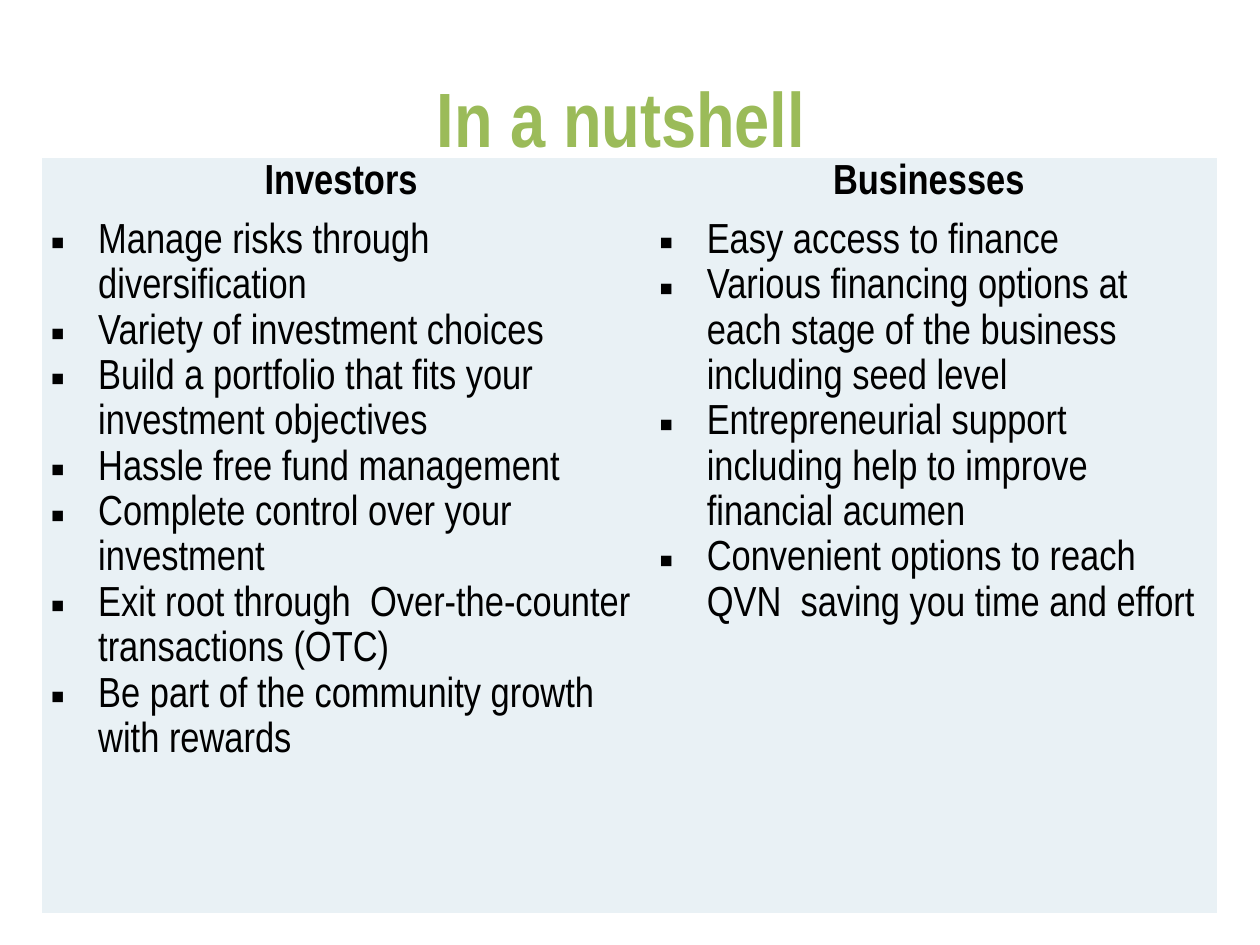
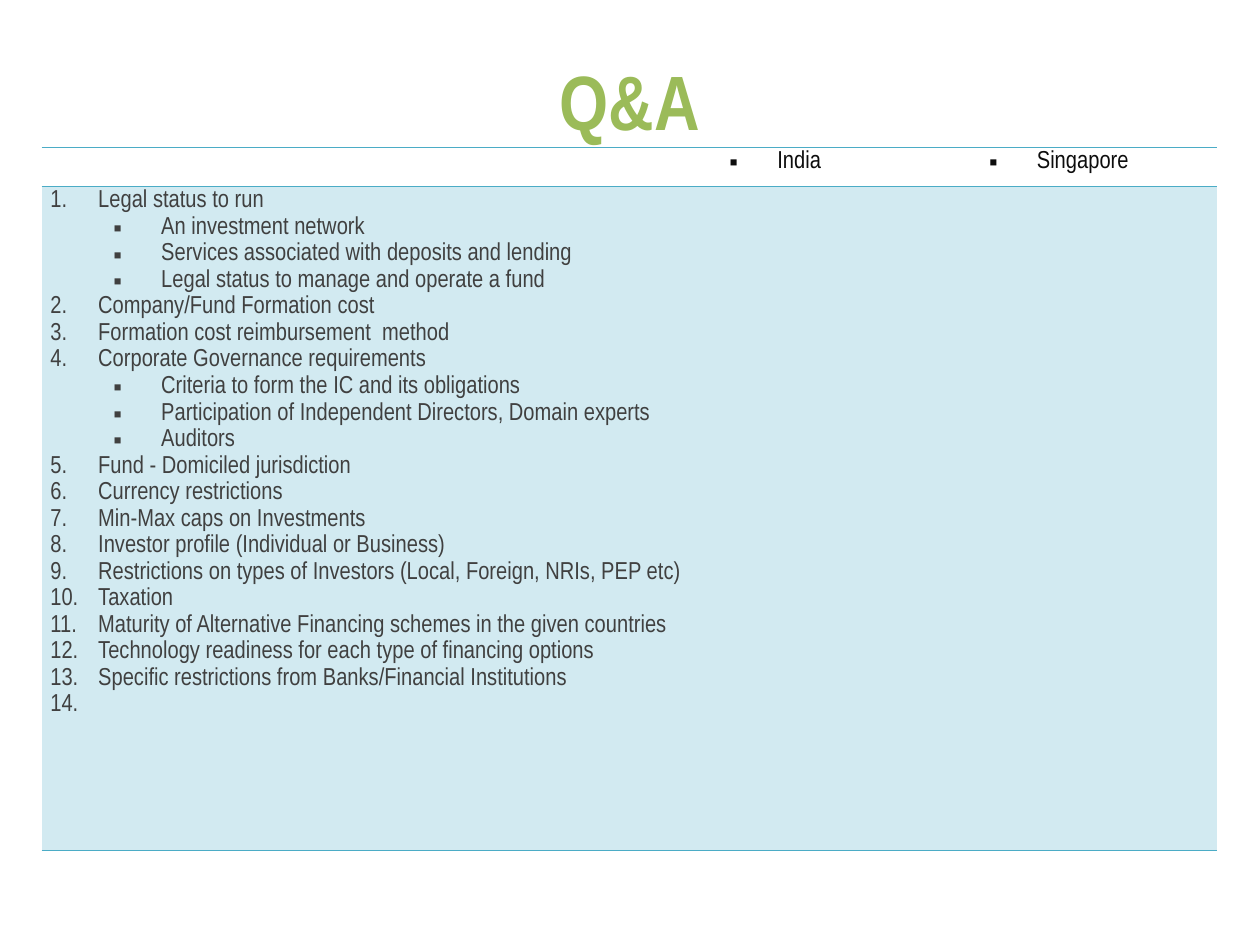
import pptx
import pptx.util
import pptx.dml.color
import pptx.enum.text
import pptx.oxml.ns
import lxml.etree

Inches = pptx.util.Inches
Pt = pptx.util.Pt
RGBColor = pptx.dml.color.RGBColor
CENTER = pptx.enum.text.PP_ALIGN.CENTER
MIDDLE = pptx.enum.text.MSO_ANCHOR.MIDDLE
qn = pptx.oxml.ns.qn

# Shared look
FONT = "Arial Narrow"
GREEN = RGBColor(0x9B, 0xBB, 0x59)
BLACK = RGBColor(0, 0, 0)
NEAR_BLACK = RGBColor(0x0D, 0x0D, 0x0D)
GREY = RGBColor(0x40, 0x40, 0x40)
PALE_BLUE = RGBColor(0xE9, 0xF1, 0xF5)
LIGHT_TEAL = RGBColor(0xD2, 0xEA, 0xF1)
TEAL = RGBColor(0x4B, 0xAC, 0xC6)
PLAIN_TABLE = "{2D5ABB26-0587-4C30-8999-92F81FD0307C}"
SQUARE, NUMBER = "square", "number"
HANGING = 0.38
SUB_INDENT = 0.5

TITLE_FORMAT = {"name": FONT, "size": Pt(44), "bold": True}
HEADING_FORMAT = {"name": FONT, "size": Pt(24), "bold": True}
BENEFIT_FORMAT = {"name": FONT, "size": Pt(24), "bold": False}
QUESTION_FORMAT = {"name": FONT, "size": Pt(14), "bold": False}

BENEFITS = {
    "Investors ": [
        "Manage risks through diversification",
        "Variety of investment choices",
        "Build a portfolio that fits your investment objectives",
        "Hassle free fund management",
        "Complete control over your investment",
        "Exit root through  Over-the-counter transactions (OTC)",
        "Be part of the community growth with rewards",
    ],
    "Businesses ": [
        "Easy access to finance",
        "Various financing options at each stage of the business including seed level",
        "Entrepreneurial support including help to improve financial acumen",
        "Convenient options to reach QVN  saving you time and effort",
    ],
}

COUNTRIES = ["India", "Singapore"]

# Each question with its sub-points
QUESTIONS = [
    ("Legal status to run", [
        "An investment network",
        "Services associated with deposits and lending",
        "Legal status to manage and operate a fund"]),
    ("Company/Fund Formation cost", []),
    ("Formation cost reimbursement  method", []),
    ("Corporate Governance requirements", [
        "Criteria to form the IC and its obligations",
        "Participation of Independent Directors, Domain experts",
        "Auditors"]),
    ("Fund - Domiciled jurisdiction", []),
    ("Currency restrictions", []),
    ("Min-Max caps on Investments", []),
    ("Investor profile (Individual or Business)", []),
    ("Restrictions on types of Investors (Local, Foreign, NRIs, PEP etc)", []),
    ("Taxation", []),
    ("Maturity of Alternative Financing schemes in the given countries", []),
    ("Technology readiness for each type of financing options", []),
    ("Specific restrictions from Banks/Financial Institutions", []),
    (" ", []),
]


def add_span(para, text, values, color):
    span = para.add_run()
    span.text = text
    for name, value in values.items():
        setattr(span.font, name, value)
    span.font.color.rgb = color


def add_bullet(para, mark):
    props = para._p.get_or_add_pPr()
    left = HANGING + SUB_INDENT * para.level
    props.set("marL", str(Inches(left)))
    props.set("indent", str(Inches(-HANGING)))
    if mark == NUMBER:
        lxml.etree.SubElement(props, qn("a:buFont"), typeface="+mj-lt")
        lxml.etree.SubElement(props, qn("a:buAutoNum"), type="arabicPeriod")
    else:
        lxml.etree.SubElement(props, qn("a:buFont"), typeface="Arial")
        lxml.etree.SubElement(props, qn("a:buChar"), char="▪")


def fill_cell(cell, items, values, color, align=None):
    """Write items of (text, level, mark), one paragraph each."""
    frame = cell.text_frame
    for index, (text, level, mark) in enumerate(items):
        para = frame.add_paragraph() if index else frame.paragraphs[0]
        para.level = level
        para.line_spacing = 1.15
        para.alignment = align
        if mark:
            add_bullet(para, mark)
        add_span(para, text, values, color)


def add_rules(cell):
    """Draw teal lines above and below the cell."""
    props = cell._tc.get_or_add_tcPr()
    for position, tag in enumerate(["a:lnT", "a:lnB"]):
        line = lxml.etree.Element(qn(tag), w=str(Pt(1)))
        paint = lxml.etree.SubElement(line, qn("a:solidFill"))
        lxml.etree.SubElement(paint, qn("a:srgbClr"), val=str(TEAL))
        props.insert(position, line)


def add_titled_page(deck, text, top):
    page = deck.slides.add_slide(deck.slide_layouts[5])
    title = page.shapes.title
    title.left, title.top = Inches(0.5), Inches(top)
    title.width, title.height = Inches(9), Inches(1.25)
    title.text_frame.vertical_anchor = MIDDLE
    para = title.text_frame.paragraphs[0]
    para.alignment = CENTER
    add_span(para, text, TITLE_FORMAT, GREEN)
    return page


def add_plain_table(page, left, top, widths, heights):
    table = page.shapes.add_table(
        len(heights), len(widths), Inches(left), Inches(top),
        Inches(sum(widths)), Inches(sum(heights))).table
    table.first_row = table.horz_banding = False
    table._tbl.tblPr.find(qn("a:tableStyleId")).text = PLAIN_TABLE
    for column, width in zip(table.columns, widths):
        column.width = Inches(width)
    for row, height in zip(table.rows, heights):
        row.height = Inches(height)
    for cell in table.iter_cells():
        cell.margin_left = cell.margin_right = Inches(0.07)
        cell.margin_top = cell.margin_bottom = 0
    return table


def paint_cell(cell, color):
    cell.fill.solid()
    cell.fill.fore_color.rgb = color


def add_benefits_table(page, left, top):
    table = add_plain_table(page, left, top, [4.83, 4.5], [0.47, 4.8, 0.73])
    for cell in table.iter_cells():
        paint_cell(cell, PALE_BLUE)
    table.cell(1, 0).merge(table.cell(2, 0))
    for column, (heading, benefits) in enumerate(BENEFITS.items()):
        fill_cell(table.cell(0, column), [(heading, 0, None)],
                  HEADING_FORMAT, BLACK, CENTER)
        fill_cell(table.cell(1, column), [(text, 0, SQUARE) for text in benefits],
                  BENEFIT_FORMAT, BLACK)


def add_questions_table(page, left, top):
    table = add_plain_table(page, left, top, [5.39, 2.06, 1.88], [0.31, 5.27])
    # Country headings
    for column, country in enumerate(COUNTRIES, start=1):
        fill_cell(table.cell(0, column), [(country, 0, SQUARE)],
                  QUESTION_FORMAT, NEAR_BLACK)
    # Numbered questions with square sub-points
    items = []
    for question, points in QUESTIONS:
        items.append((question, 0, NUMBER))
        items.extend((point, 1, SQUARE) for point in points)
    fill_cell(table.cell(1, 0), items, QUESTION_FORMAT, GREY)
    # Fills and rules
    for column in range(len(table.columns)):
        heading, body = table.cell(0, column), table.cell(1, column)
        heading.fill.background()
        paint_cell(body, LIGHT_TEAL)
        add_rules(heading)
        add_rules(body)


def main():
    deck = pptx.Presentation()
    deck.slide_width, deck.slide_height = Inches(10), Inches(7.5)
    add_benefits_table(add_titled_page(deck, "In a nutshell ", 0.3), 0.33, 1.25)
    add_questions_table(add_titled_page(deck, "Q&A", 0.17), 0.33, 1.17)
    deck.save("out.pptx")


if __name__ == "__main__":
    main()
